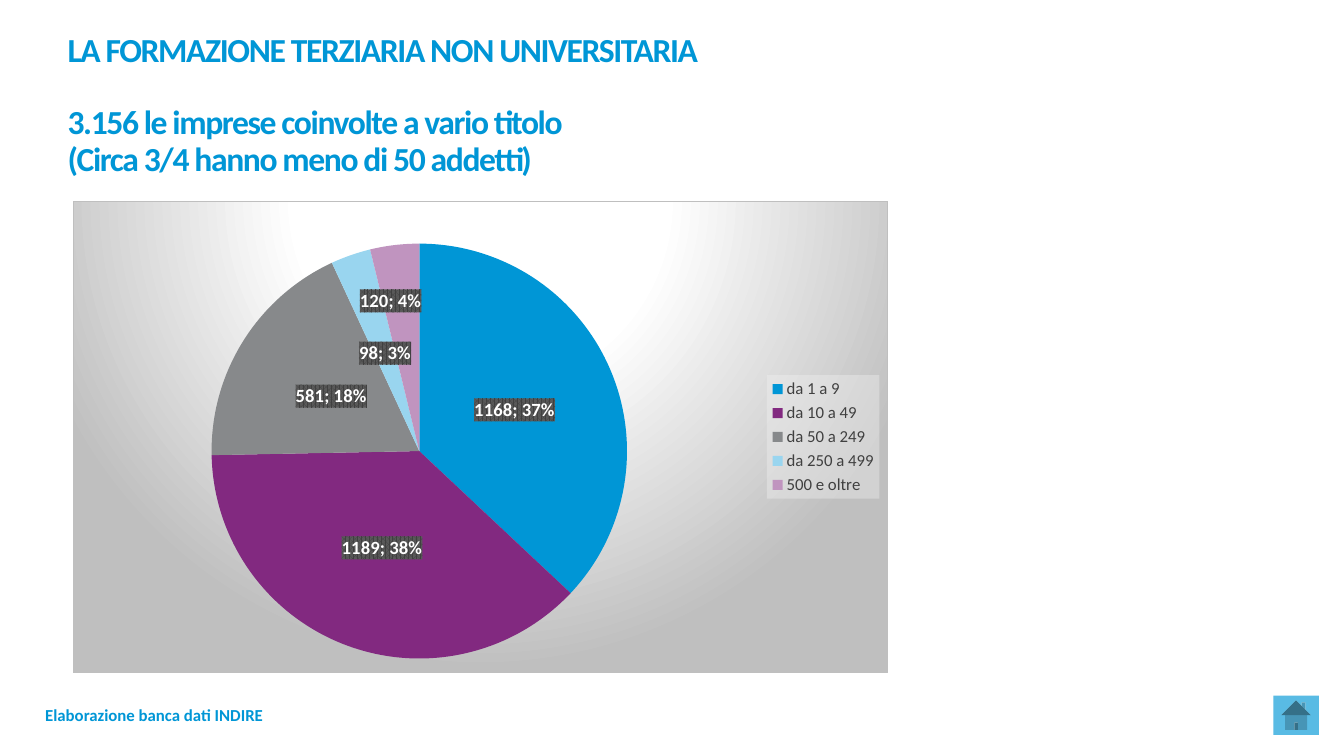
import copy

import pptx
import pptx.chart.data
import pptx.dml.color
import pptx.enum.chart
import pptx.enum.shapes
import pptx.enum.text
import pptx.oxml
import pptx.oxml.ns
import pptx.util

Inches, Pt = pptx.util.Inches, pptx.util.Pt
COLORS = {
    "blue": "0096D6", "purple": "822980", "gray": "87898B", "sky": "99D5EF",
    "mauve": "C094BF", "home": "59BBE4", "white": "FFFFFF", "dark": "404040",
    "mid": "595959", "edge": "BFBFBF", "pale": "F2F2F2", "black": "000000",
}
FIRMS = [
    ("da 1 a 9", 1168, "blue"),
    ("da 10 a 49", 1189, "purple"),
    ("da 50 a 249", 581, "gray"),
    ("da 250 a 499", 98, "sky"),
    ("500 e oltre", 120, "mauve"),
]


def rgb(name):
    return pptx.dml.color.RGBColor.from_string(COLORS[name])


def xml(tag, body=""):
    """Build a chart element from its tag and inner markup."""
    spaces = pptx.oxml.ns.nsdecls("c", "a")
    return pptx.oxml.parse_xml(f"<c:{tag} {spaces}>{body}</c:{tag}>")


def tint(name, extra=""):
    return f'<a:srgbClr val="{COLORS[name]}">{extra}</a:srgbClr>'


def layout(x, y, size=None, inner=False):
    """Manual layout in fractions of the chart; without a size it is an offset."""
    body = '<c:layoutTarget val="inner"/>' if inner else ""
    if size:
        body += '<c:xMode val="edge"/><c:yMode val="edge"/>'
    body += f'<c:x val="{x}"/><c:y val="{y}"/>'
    if size:
        body += f'<c:w val="{size[0]}"/><c:h val="{size[1]}"/>'
    return xml("layout", f"<c:manualLayout>{body}</c:manualLayout>")


class Deck:
    face = "Calibri"

    def __init__(self):
        self.show = pptx.Presentation()
        self.show.slide_width, self.show.slide_height = Inches(13.33), Inches(7.5)
        self.slide = self.show.slides.add_slide(self.show.slide_layouts[6])

    def style(self, font, size, color, bold=False):
        font.name, font.size, font.bold = self.face, Pt(size), bold
        font.color.rgb = rgb(color)

    def text(self, box, lines, size, inset=None, gaps=(), leading=None, track=None,
             anchor=pptx.enum.text.MSO_ANCHOR.TOP):
        """Add bold blue lines; gaps maps a line index to its space before."""
        frame = self.slide.shapes.add_textbox(*map(Inches, box)).text_frame
        frame.word_wrap, frame.vertical_anchor = True, anchor
        if inset is not None:
            frame.margin_left = frame.margin_right = Inches(inset)
            frame.margin_top = frame.margin_bottom = Inches(inset)
        frame.text = "\n".join(lines)
        for index, para in enumerate(frame.paragraphs):
            if leading:
                para.line_spacing = leading
            if index in gaps:
                para.space_before = Pt(gaps[index])
            for run in para.runs:
                self.style(run.font, size, "blue", True)
                if track:
                    run.font._element.set("spc", str(track * 100))

    def home(self, box):
        kind = pptx.enum.shapes.MSO_SHAPE.ACTION_BUTTON_HOME
        button = self.slide.shapes.add_shape(kind, *map(Inches, box))
        button.shadow.inherit = False
        button.fill.solid()
        button.fill.fore_color.rgb = rgb("home")
        button.line.fill.background()

    def pie(self, box, rows):
        data = pptx.chart.data.CategoryChartData()
        data.categories = [row[0] for row in rows]
        data.add_series("Series 1", [row[1] for row in rows])
        kind = pptx.enum.chart.XL_CHART_TYPE.PIE
        chart = self.slide.shapes.add_chart(kind, *map(Inches, box), data).chart
        chart.has_title = False
        self.style(chart.font, 10, "black")
        chart.plots[0].vary_by_categories = True
        series = chart.plots[0].series[0]
        for index, row in enumerate(rows):
            fill = series.points[index].format.fill
            fill.solid()
            fill.fore_color.rgb = rgb(row[2])
        self.back(chart)
        self.legend(chart)
        self.labels(series.data_labels)

    def back(self, chart):
        """Gradient background, border and place of the pie."""
        stops = "".join(f'<a:gs pos="{pos}000">{tint(name)}</a:gs>' for pos, name in
                        ((0, "white"), (39, "white"), (100, "edge")))
        area = xml("spPr", f'<a:gradFill><a:gsLst>{stops}</a:gsLst><a:path path="circle">'
                   '<a:fillToRect l="50000" t="-80000" r="50000" b="180000"/></a:path>'
                   f'</a:gradFill><a:ln w="{Pt(0.75)}"><a:solidFill>{tint("edge")}'
                   '</a:solidFill></a:ln>')
        root = chart._chartSpace
        root.find(pptx.oxml.ns.qn("c:chart")).addnext(area)
        plot = root.chart.plotArea
        for old in plot.findall(pptx.oxml.ns.qn("c:layout")):
            plot.remove(old)
        plot.insert(0, layout(0.17, 0.09, (0.51, 0.88), True))

    def legend(self, chart):
        chart.has_legend = True
        legend = chart.legend
        legend.position = pptx.enum.chart.XL_LEGEND_POSITION.RIGHT
        legend.include_in_layout = False
        self.style(legend.font, 12, "dark")
        veil = tint("pale", '<a:alpha val="39000"/>')
        legend._element.find(pptx.oxml.ns.qn("c:txPr")).addprevious(
            xml("spPr", f"<a:solidFill>{veil}</a:solidFill>"))

    def labels(self, labels):
        labels.show_value = labels.show_percentage = True
        labels.position = pptx.enum.chart.XL_LABEL_POSITION.CENTER
        self.style(labels.font, 13.3, "white", True)
        root, qn = labels._element, pptx.oxml.ns.qn
        root.find(qn("c:txPr")).addprevious(xml(
            "spPr", f'<a:pattFill prst="pct75"><a:fgClr>{tint("dark")}</a:fgClr>'
            f'<a:bgClr>{tint("mid")}</a:bgClr></a:pattFill>'))
        mark = xml("separator", "; ")
        last = root.find(qn("c:showBubbleSize"))
        if last is None:
            last = root.find(qn("c:showPercent"))
        last.addnext(mark)
        moved = xml("dLbl", '<c:idx val="4"/>')
        moved.append(layout(-0.02, -0.1))
        for part in root:
            if part.tag not in (qn("c:showLeaderLines"), qn("c:leaderLines")):
                moved.append(copy.deepcopy(part))
        root.insert(0, moved)


def main():
    deck = Deck()
    deck.home((12.63, 6.9, 0.45, 0.39))
    deck.text((0.67, 0.33, 11.12, 1.37),
              ["LA FORMAZIONE TERZIARIA NON UNIVERSITARIA",
               "3.156 le imprese coinvolte a vario titolo",
               "(Circa 3/4 hanno meno di 50 addetti)"],
              24, inset=0, gaps={1: 26}, leading=0.9, track=-1)
    deck.text((0.35, 6.9, 9, 0.39), ["Elaborazione banca dati INDIRE"], 12,
              anchor=pptx.enum.text.MSO_ANCHOR.MIDDLE)
    deck.pie((0.72, 1.99, 8.09, 4.69), FIRMS)
    deck.show.save("out.pptx")


if __name__ == "__main__":
    main()
